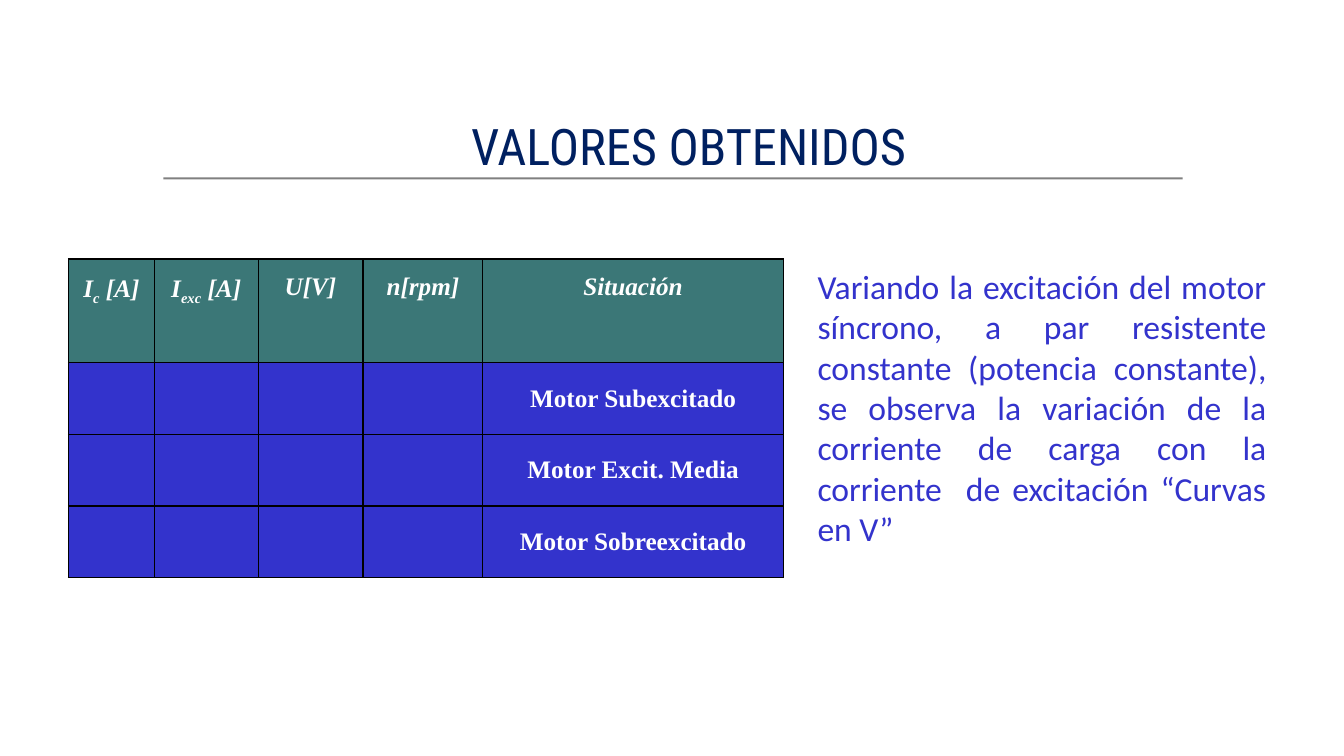
from pptx import Presentation
from pptx.dml.color import RGBColor
from pptx.enum.shapes import MSO_SHAPE
from pptx.enum.text import MSO_ANCHOR, PP_ALIGN
from pptx.oxml.ns import qn
from pptx.util import Inches, Pt
from lxml import etree

RECT = MSO_SHAPE.RECTANGLE
TOP, MIDDLE = MSO_ANCHOR.TOP, MSO_ANCHOR.MIDDLE
CENTER, JUSTIFY = PP_ALIGN.CENTER, PP_ALIGN.JUSTIFY

COLORS = {
    "title": "002060",
    "rule": "808080",
    "header": "3B7777",
    "blue": "3333CC",
    "white": "FFFFFF",
    "border": "000000",
}
COL_WIDTHS = [0.85, 1.03, 1.04, 1.19, 2.98]
ROW_HEIGHTS = [1.03, 0.71, 0.71, 0.71]
HEADERS = [
    [("I", 0), ("c", -25), (" [A]", 0)],
    [("I", 0), ("exc", -25), (" [A]", 0)],
    [("U[V]", 0)],
    [("n[rpm]", 0)],
    [("Situación", 0)],
]
SITUATIONS = ["Motor Subexcitado", "Motor Excit. Media", "Motor Sobreexcitado"]
EXPLANATION = (
    "Variando la excitación del motor síncrono, a par resistente constante "
    "(potencia constante), se observa la variación de la corriente de carga "
    "con la corriente  de excitación “Curvas en V”"
)


def rgb(name):
    return RGBColor.from_string(COLORS[name])


def write(tf, parts, font="Times New Roman", size=18, color="white",
          bold=False, italic=False, align=CENTER, spacing=1.0):
    p = tf.paragraphs[0]
    p.alignment = align
    p.line_spacing = spacing
    for text, baseline in parts:
        r = p.add_run()
        r.text = text
        r.font.name = font
        r.font.size = Pt(size)
        r.font.bold = bold
        r.font.italic = italic
        r.font.color.rgb = rgb(color)
        if baseline:
            r.font._element.set("baseline", str(baseline * 1000))


def add_title(s, text):
    sp = s.shapes.title
    sp.left, sp.top = Inches(2.41), Inches(0.9)
    sp.width, sp.height = Inches(8.84), Inches(1.08)
    tf = sp.text_frame
    tf.word_wrap = True
    tf.vertical_anchor = MIDDLE
    write(tf, [(text, 0)], font="Roboto Condensed", size=36, color="title")


def add_rule(s):
    sp = s.shapes.add_shape(RECT, Inches(1.62), Inches(1.76), Inches(10.11), Inches(0.02))
    sp.shadow.inherit = False
    sp.fill.solid()
    sp.fill.fore_color.rgb = rgb("rule")
    sp.line.fill.background()


def add_paragraph_box(s, text):
    sp = s.shapes.add_textbox(Inches(8.01), Inches(2.59), Inches(4.65), Inches(2.93))
    tf = sp.text_frame
    tf.word_wrap = True
    write(tf, [(text, 0)], font="Calibri", size=24, color="blue", align=JUSTIFY)


def format_cell(cell, fill, anchor):
    cell.margin_left = cell.margin_right = Inches(0.05)
    cell.margin_top = cell.margin_bottom = 0
    cell.vertical_anchor = anchor
    tcPr = cell._tc.get_or_add_tcPr()
    for side in ("lnL", "lnR", "lnT", "lnB"):
        ln = etree.SubElement(tcPr, qn(f"a:{side}"), w=str(Pt(1)))
        solid = etree.SubElement(ln, qn("a:solidFill"))
        etree.SubElement(solid, qn("a:srgbClr"), val=COLORS["border"])
    cell.fill.solid()
    cell.fill.fore_color.rgb = rgb(fill)


def add_values_table(s):
    frame = s.shapes.add_table(
        len(ROW_HEIGHTS), len(COL_WIDTHS), Inches(0.68), Inches(2.57),
        Inches(sum(COL_WIDTHS)), Inches(sum(ROW_HEIGHTS)))
    table = frame.table
    for col, width in zip(table.columns, COL_WIDTHS):
        col.width = Inches(width)
    for i, height in enumerate(ROW_HEIGHTS):
        table.rows[i].height = Inches(height)
        for cell in table.rows[i].cells:
            format_cell(cell, "blue" if i else "header", MIDDLE if i else TOP)
    for j, parts in enumerate(HEADERS):
        write(table.cell(0, j).text_frame, parts, bold=True, italic=True, spacing=1.5)
    for i, situation in enumerate(SITUATIONS, 1):
        write(table.cell(i, len(COL_WIDTHS) - 1).text_frame, [(situation, 0)], bold=True)


def main():
    prs = Presentation()
    prs.slide_width, prs.slide_height = Inches(13.33), Inches(7.5)
    s = prs.slides.add_slide(prs.slide_layouts[5])
    add_rule(s)
    add_title(s, "VALORES OBTENIDOS")
    add_values_table(s)
    add_paragraph_box(s, EXPLANATION)
    prs.save("out.pptx")


if __name__ == "__main__":
    main()
